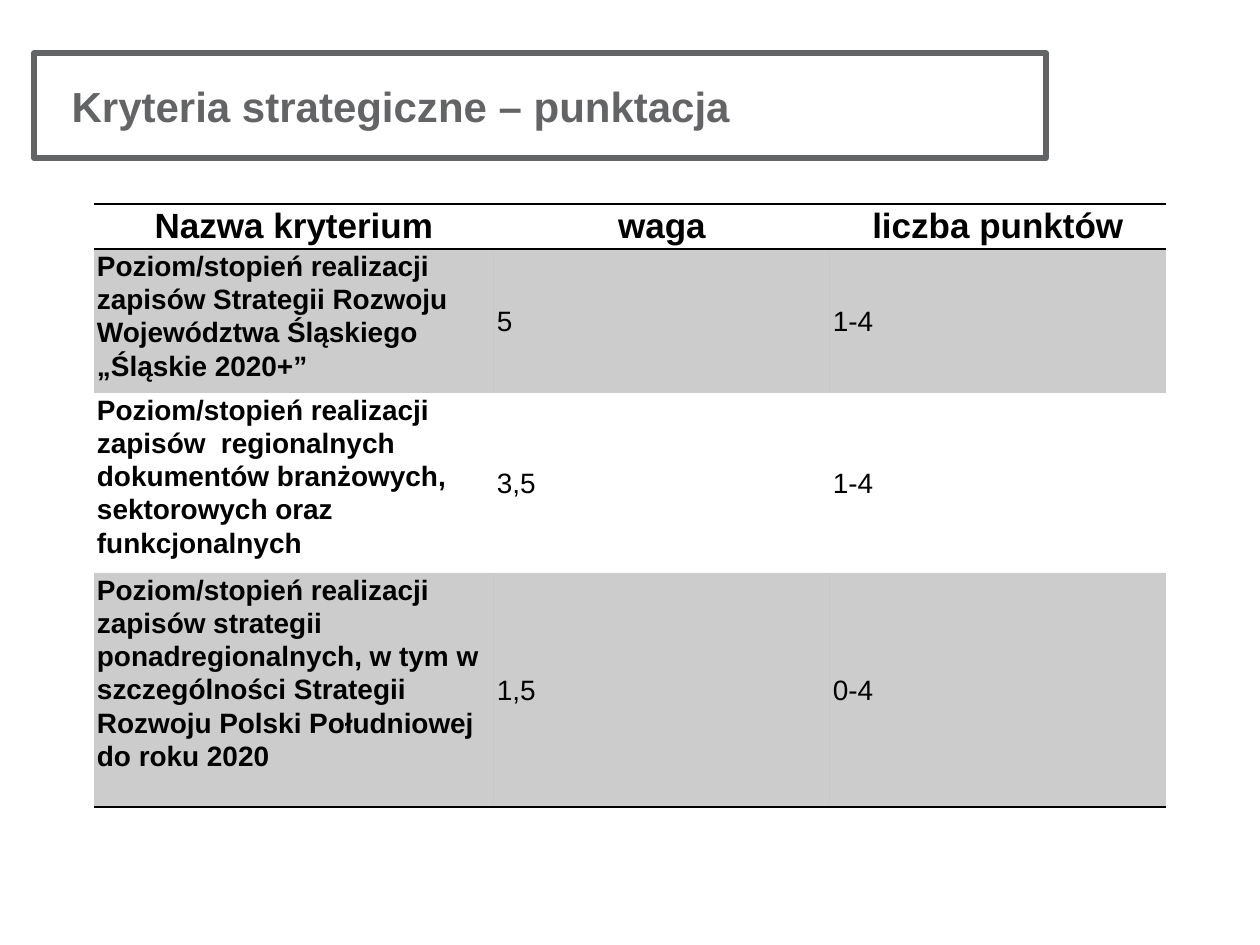
from lxml import etree
from pptx import Presentation
from pptx import util as u
from pptx.dml.color import RGBColor
from pptx.enum import text
from pptx.oxml import ns

EMU_PER_PX = 914400 // 126
FONT = "Arial"
GREY = RGBColor(0x63, 0x64, 0x66)
BLACK = RGBColor(0, 0, 0)
BAND_ALPHA = 20000

COLUMN_WIDTHS = [400, 336, 336]
ROW_HEIGHTS = [45, 144, 180, 234]
HEADINGS = ["Nazwa kryterium", "waga", "liczba punktów"]
CRITERIA = [
    ["Poziom/stopień realizacji zapisów Strategii Rozwoju Województwa "
     "Śląskiego „Śląskie 2020+”", "5", "1-4"],
    ["Poziom/stopień realizacji zapisów  regionalnych dokumentów "
     "branżowych, sektorowych oraz funkcjonalnych", "3,5", "1-4"],
    ["Poziom/stopień realizacji zapisów strategii ponadregionalnych, w tym "
     "w szczególności Strategii Rozwoju Polski Południowej do roku 2020",
     "1,5", "0-4"],
]


def px(length):
    return u.Emu(length * EMU_PER_PX)


def add_run(paragraph, wording, size, color, bold):
    run = paragraph.add_run()
    run.text = wording
    run.font.name = FONT
    run.font.size = u.Pt(size)
    run.font.bold = bold
    run.font.color.rgb = color


def add_title(slide, wording):
    title = slide.shapes.title
    title.left, title.top, title.width, title.height = map(px, (34, 74, 1012, 63))
    title.line.color.rgb = GREY
    title.line.width = u.Pt(3)
    frame = title.text_frame
    frame.auto_size = text.MSO_AUTO_SIZE.SHAPE_TO_FIT_TEXT
    paragraph = frame.paragraphs[0]
    paragraph.alignment = text.PP_ALIGN.JUSTIFY
    paragraph.space_after = u.Pt(6)
    properties = paragraph._p.get_or_add_pPr()
    properties.set("marL", str(px(25)))
    properties.set("indent", "0")
    add_run(paragraph, wording, 24, GREY, True)


def set_borders(cell, ruled):
    """Rule the named sides (L, R, T, B) in black and clear the others."""
    properties = cell._tc.get_or_add_tcPr()
    for index, side in enumerate("LRTB"):
        line = etree.Element(ns.qn(f"a:ln{side}"), w=str(u.Pt(1)))
        if side in ruled:
            fill = etree.SubElement(line, ns.qn("a:solidFill"))
            etree.SubElement(fill, ns.qn("a:srgbClr"), val=str(BLACK))
        else:
            etree.SubElement(line, ns.qn("a:noFill"))
        properties.insert(index, line)


def fill_cell(cell, banded):
    if not banded:
        cell.fill.background()
        return
    cell.fill.solid()
    cell.fill.fore_color.rgb = BLACK
    color = cell._tc.tcPr.find(".//" + ns.qn("a:srgbClr"))
    etree.SubElement(color, ns.qn("a:alpha"), val=str(BAND_ALPHA))


def write_cell(cell, wording, size, bold, alignment, anchor):
    cell.margin_left = cell.margin_right = px(3)
    cell.margin_top = cell.margin_bottom = 0
    cell.vertical_anchor = anchor
    paragraph = cell.text_frame.paragraphs[0]
    paragraph.alignment = alignment
    paragraph.line_spacing = 1.07
    add_run(paragraph, wording, size, BLACK, bold)


def add_criteria_table(slide):
    rows = [HEADINGS] + CRITERIA
    table = slide.shapes.add_table(
        len(rows), len(HEADINGS), px(94), px(204),
        px(sum(COLUMN_WIDTHS)), px(sum(ROW_HEIGHTS))).table
    table.first_row = table.horz_banding = False
    for column, width in zip(table.columns, COLUMN_WIDTHS):
        column.width = px(width)
    for row, height in zip(table.rows, ROW_HEIGHTS):
        row.height = px(height)

    align, anchor = text.PP_ALIGN, text.MSO_ANCHOR
    for r, row in enumerate(rows):
        for c, wording in enumerate(row):
            cell = table.cell(r, c)
            if r == 0:
                write_cell(cell, wording, 20, True, align.CENTER, anchor.TOP)
            elif c == 0:
                write_cell(cell, wording, 16, True, align.LEFT, anchor.TOP)
            else:
                write_cell(cell, wording, 16, False, align.JUSTIFY, anchor.MIDDLE)
            fill_cell(cell, banded=r % 2 == 1)
            # The header's bottom rule is also the first criterion's top edge.
            set_borders(cell, {0: "TB", 1: "T", len(rows) - 1: "B"}.get(r, ""))


def main():
    presentation = Presentation()
    presentation.slide_width = u.Inches(10)
    presentation.slide_height = u.Inches(7.5)
    slide = presentation.slides.add_slide(presentation.slide_layouts[5])
    add_title(slide, "Kryteria strategiczne – punktacja")
    add_criteria_table(slide)
    presentation.save("out.pptx")


if __name__ == "__main__":
    main()
